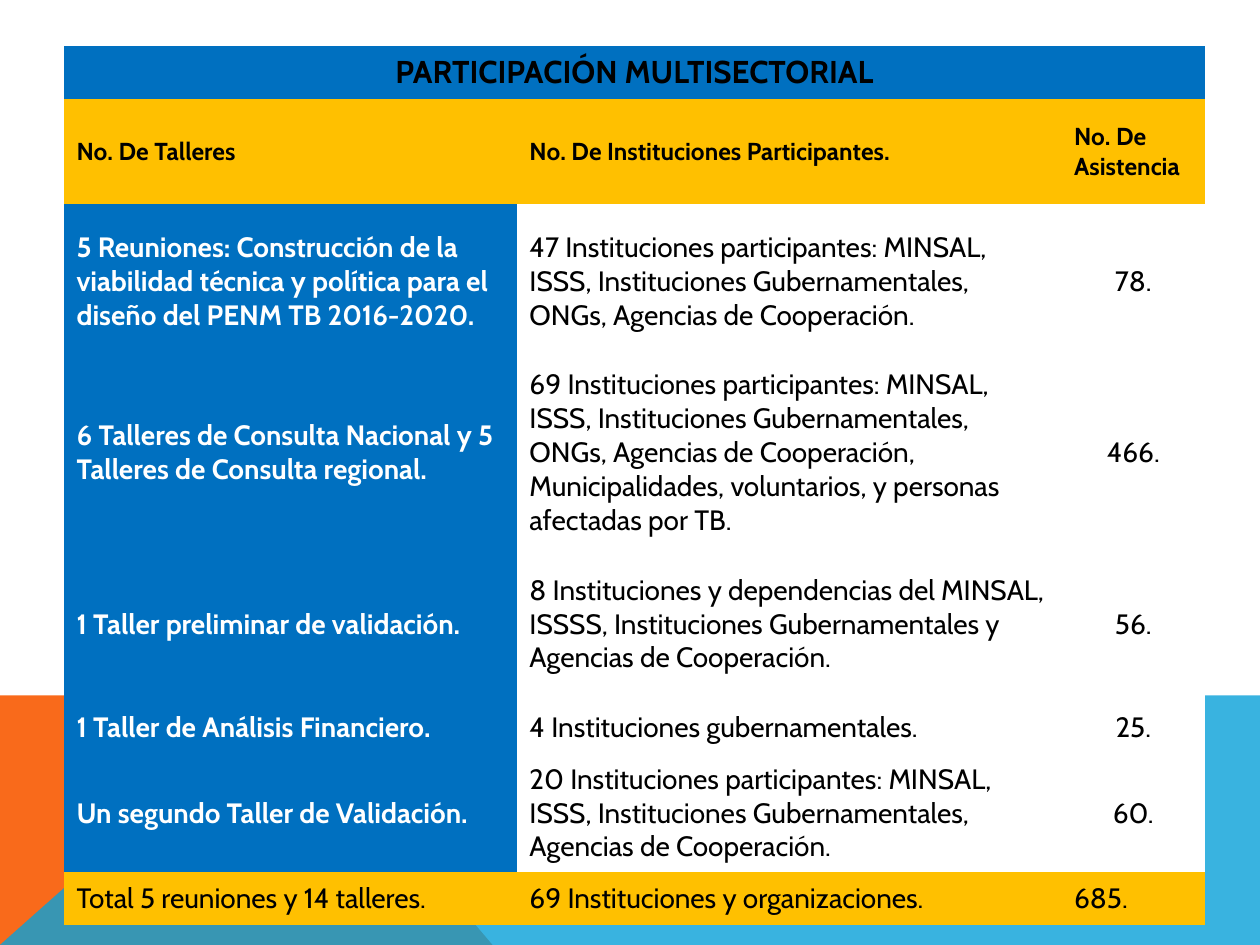
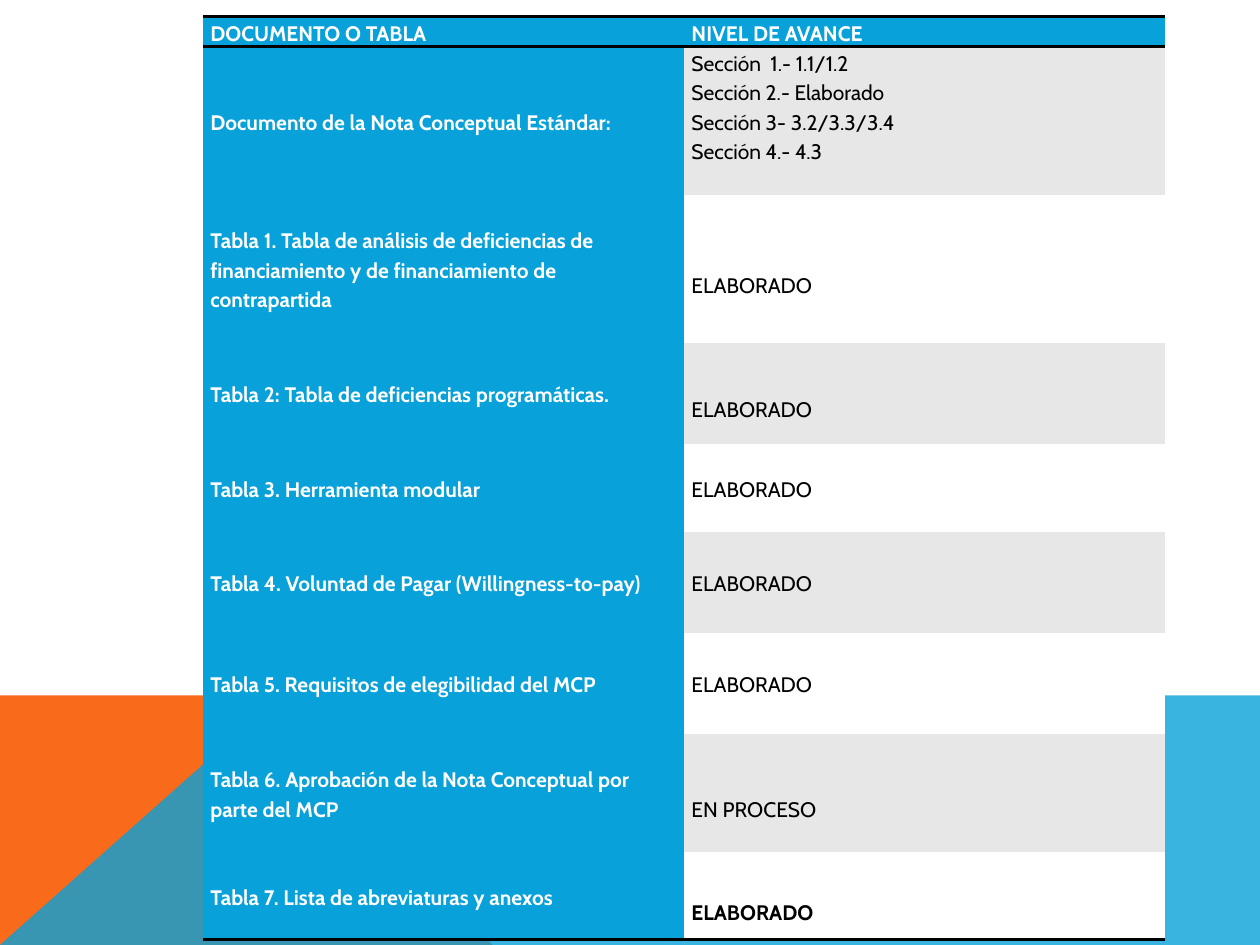
from lxml import etree
from pptx import Presentation
from pptx.dml.color import RGBColor
from pptx.enum import text as t
from pptx.oxml import ns
from pptx.util import Cm, Pt

FONT = "Cabin"
BLACK = RGBColor(0x00, 0x00, 0x00)
WHITE = RGBColor(0xFF, 0xFF, 0xFF)
GREY = RGBColor(0xE7, 0xE7, 0xE7)
BLUE = RGBColor(0x00, 0x70, 0xC0)
AMBER = RGBColor(0xFF, 0xC0, 0x00)
ORANGE = RGBColor(0xF9, 0x6A, 0x1B)
SKY = RGBColor(0x08, 0xA1, 0xD9)

PAGE_WIDTH, PAGE_HEIGHT = 25.4, 19.05
BAND_BOX = (0, 14.02, PAGE_WIDTH, 5.03)
NO_STYLE_NO_GRID = "{2D5ABB26-0587-4C30-8999-92F81FD0307C}"
BLANK_LINE = 0.6  # height of one 12 pt line, in cm

WORKSHOPS = [
    ("5 Reuniones: Construcción de la viabilidad técnica y política para el "
     "diseño del PENM TB 2016-2020.",
     "47 Instituciones participantes: MINSAL, ISSS, Instituciones "
     "Gubernamentales, ONGs, Agencias de Cooperación.", "78."),
    ("6 Talleres de Consulta Nacional y 5 Talleres de Consulta regional.",
     "69 Instituciones participantes: MINSAL, ISSS, Instituciones "
     "Gubernamentales, ONGs, Agencias de Cooperación, Municipalidades, "
     "voluntarios, y personas afectadas por TB.", "466."),
    ("1 Taller preliminar de validación.",
     "8 Instituciones y dependencias del MINSAL, ISSSS, Instituciones "
     "Gubernamentales y Agencias de Cooperación.", "56."),
    ("1 Taller de Análisis Financiero.",
     "4 Instituciones gubernamentales.", "25."),
    ("Un segundo Taller de Validación.",
     "20 Instituciones participantes: MINSAL, ISSS, Instituciones "
     "Gubernamentales, Agencias de Cooperación.", "60."),
]
WORKSHOP_HEADS = ("No. De Talleres", "No. De Instituciones Participantes.",
                  "No. De Asistencia")
WORKSHOP_TOTALS = ("Total 5 reuniones y 14 talleres.",
                   "69 Instituciones y organizaciones.", "685.")

SECTIONS = ("Sección  1.- 1.1/1.2\nSección 2.- Elaborado\n"
            "Sección 3- 3.2/3.3/3.4\nSección 4.- 4.3")
# document, progress, space above and below the progress (cm), row height (cm)
DOCUMENTS = [
    ("Documento de la Nota Conceptual Estándar:", SECTIONS, 0, BLANK_LINE, 3),
    ("Tabla 1. Tabla de análisis de deficiencias de financiamiento y de "
     "financiamiento de contrapartida", "ELABORADO", BLANK_LINE, 0, 2.97),
    ("Tabla 2: Tabla de deficiencias programáticas.",
     "ELABORADO", BLANK_LINE, 0, 2.04),
    ("Tabla 3. Herramienta modular", "ELABORADO", 0, 0, 1.77),
    ("Tabla 4. Voluntad de Pagar (Willingness-to-pay)",
     "ELABORADO", 0, 0, 2.04),
    ("Tabla 5. Requisitos de elegibilidad del MCP", "ELABORADO", 0, 0, 2.04),
    ("Tabla 6. Aprobación de la Nota Conceptual por parte del MCP",
     "EN PROCESO", BLANK_LINE, 0, 2.38),
    ("Tabla 7. Lista de abreviaturas y anexos",
     "ELABORADO", BLANK_LINE, 0, 1.77),
]


def add_band_part(slide, corners, color, alpha=None):
    (start_x, start_y), *others = [(Cm(x), Cm(y)) for x, y in corners]
    builder = slide.shapes.build_freeform(start_x, start_y)
    builder.add_line_segments(others, close=True)
    part = builder.convert_to_shape()
    part.shadow.inherit = False
    part.fill.solid()
    part.fill.fore_color.rgb = color
    part.line.fill.background()
    if alpha:
        srgb = part.fill._xPr.find(".//" + ns.qn("a:srgbClr"))
        etree.SubElement(srgb, ns.qn("a:alpha"), val=str(alpha * 1000))


def add_bottom_band(slide, box):
    left, top, width, height = box
    right, bottom = left + width, top + height
    peak = (left + 5.66, top)
    add_band_part(slide, [(left, bottom), (left, top), peak,
                          (left + 9.93, bottom)], ORANGE)
    add_band_part(slide, [(left, bottom), peak, (right, top),
                          (right, bottom)], SKY, alpha=80)


def add_plain_table(slide, left, top, widths, heights):
    """Add a table without style or grid; all lengths are in cm."""
    table = slide.shapes.add_table(
        len(heights), len(widths), Cm(left), Cm(top),
        Cm(sum(widths)), Cm(sum(heights))).table
    table._tbl.tblPr.find(ns.qn("a:tableStyleId")).text = NO_STYLE_NO_GRID
    table.first_row = table.horz_banding = False
    for column, width in zip(table.columns, widths):
        column.width = Cm(width)
    for row, height in zip(table.rows, heights):
        row.height = Cm(height)
    return table


def fill_cell(cell, words, fill, size, color=BLACK, bold=False,
              align=t.PP_ALIGN.LEFT, spacing=None, margins=None):
    cell.fill.solid()
    cell.fill.fore_color.rgb = fill
    cell.vertical_anchor = t.MSO_ANCHOR.MIDDLE
    for side, length in (margins or {}).items():
        setattr(cell, "margin_" + side, Cm(length))
    cell.text_frame.text = words
    for paragraph in cell.text_frame.paragraphs:
        paragraph.alignment = align
        if spacing:
            paragraph.line_spacing = spacing
        font_format = {"name": FONT, "size": Pt(size), "bold": bold}
        for run in paragraph.runs:
            for key, value in font_format.items():
                setattr(run.font, key, value)
            run.font.color.rgb = color


def rule_cell(cell, *sides):
    """Draw 2 pt black borders; sides are given in the order T, B."""
    tc_pr = cell._tc.get_or_add_tcPr()
    for index, side in enumerate(sides):
        border = etree.Element(ns.qn("a:ln" + side), w=str(Pt(2)))
        solid = etree.SubElement(border, ns.qn("a:solidFill"))
        etree.SubElement(solid, ns.qn("a:srgbClr"), val=str(BLACK))
        tc_pr.insert(index, border)


def add_participation_table(slide, left, top):
    heights = [1.07, 2.13, 3.1, 3.81, 3.1, 1.07, 2.38, 1.07]
    table = add_plain_table(slide, left, top, [9.13, 10.98, 2.89], heights)
    title = table.cell(0, 0)
    title.merge(table.cell(0, 2))
    fill_cell(title, "PARTICIPACIÓN MULTISECTORIAL", BLUE, 18, bold=True,
              align=t.PP_ALIGN.CENTER)
    column_formats = [
        {"fill": BLUE, "color": WHITE, "bold": True},
        {"fill": WHITE},
        {"fill": WHITE, "align": t.PP_ALIGN.CENTER},
    ]
    last = len(heights) - 1
    for col, column_format in enumerate(column_formats):
        fill_cell(table.cell(1, col), WORKSHOP_HEADS[col], AMBER, 14, bold=True)
        for row, workshop in enumerate(WORKSHOPS, start=2):
            fill_cell(table.cell(row, col), workshop[col], size=16,
                      **column_format)
        fill_cell(table.cell(last, col), WORKSHOP_TOTALS[col], AMBER, 16)


def add_progress_table(slide, left, top):
    heights = [0.59] + [document[-1] for document in DOCUMENTS]
    table = add_plain_table(slide, left, top, [9.7, 9.7], heights)
    margins = {"left": 0.15, "right": 0.15, "top": 0, "bottom": 0}
    common = {"size": 12, "spacing": 1.15}
    label = {"fill": SKY, "color": WHITE, "bold": True, "margins": margins,
             **common}
    for col, head in enumerate(("DOCUMENTO O TABLA", "NIVEL DE AVANCE")):
        fill_cell(table.cell(0, col), head, **label)
        rule_cell(table.cell(0, col), "T", "B")
    for row, (name, progress, above, below, _) in enumerate(DOCUMENTS, start=1):
        fill_cell(table.cell(row, 0), name, **label)
        fill_cell(table.cell(row, 1), progress, GREY if row % 2 else WHITE,
                  bold=row == len(DOCUMENTS),
                  margins={**margins, "top": above, "bottom": below}, **common)
    for col in range(2):
        rule_cell(table.cell(len(DOCUMENTS), col), "B")


def main():
    deck = Presentation()
    deck.slide_width, deck.slide_height = Cm(PAGE_WIDTH), Cm(PAGE_HEIGHT)
    for add_content, left, top in ((add_participation_table, 1.29, 0.92),
                                   (add_progress_table, 4.09, 0.34)):
        slide = deck.slides.add_slide(deck.slide_layouts[6])
        add_bottom_band(slide, BAND_BOX)
        add_content(slide, left, top)
    deck.save("out.pptx")


if __name__ == "__main__":
    main()
